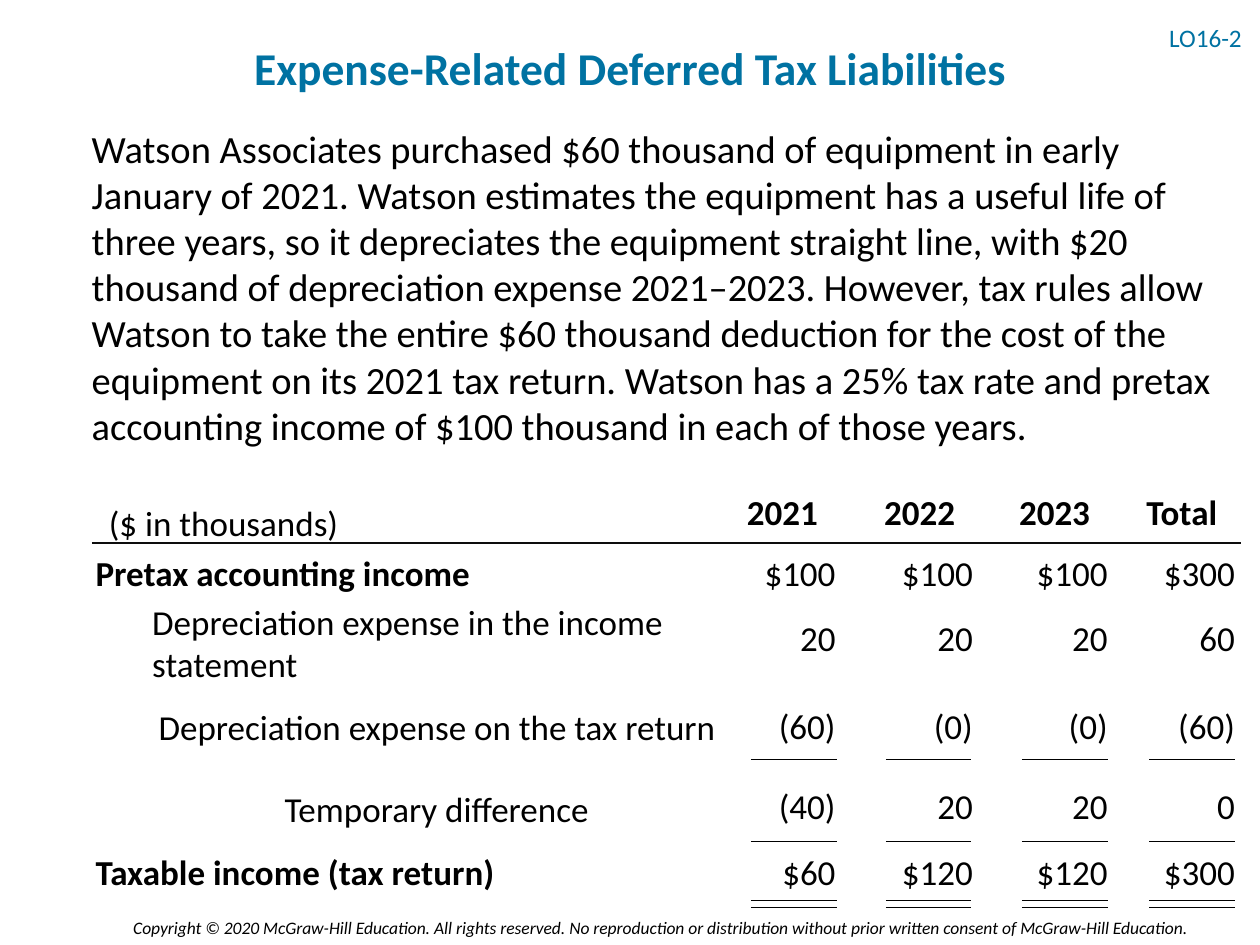
from pptx import Presentation
from pptx.dml.color import RGBColor
from pptx.enum.shapes import MSO_CONNECTOR
from pptx.enum.text import MSO_ANCHOR, PP_ALIGN
from pptx.oxml.ns import qn
from pptx.util import Inches, Pt
from lxml import etree

LEFT, CENTER, RIGHT = PP_ALIGN.LEFT, PP_ALIGN.CENTER, PP_ALIGN.RIGHT
MIDDLE = MSO_ANCHOR.MIDDLE
STRAIGHT = MSO_CONNECTOR.STRAIGHT
BLUE, BLACK = "0072A2", "000000"
ROW_HEIGHT = 0.44

deck = Presentation()
deck.slide_width, deck.slide_height = Inches(10), Inches(7.5)
page = deck.slides.add_slide(deck.slide_layouts[5])


def write(text, left, top, width, height, size=20, color=BLACK, bold=False,
          italic=False, align=LEFT, indent=0, box=None):
    """Fill the given box, or a new text box, with one formatted paragraph."""
    box = box or page.shapes.add_textbox(0, 0, 0, 0)
    box.left, box.top = Inches(left), Inches(top)
    box.width, box.height = Inches(width), Inches(height)
    frame = box.text_frame
    frame.word_wrap = True
    frame.text = text
    para = frame.paragraphs[0]
    para.alignment = align
    if indent:
        properties = para._p.get_or_add_pPr()
        properties.set("marL", str(Inches(indent)))
        properties.set("indent", "0")
    font = para.runs[0].font
    font.name, font.size = "Calibri", Pt(size)
    font.bold, font.italic = bold, italic
    font.color.rgb = RGBColor.from_string(color)
    return frame


def draw_rule(left, right, top, weight=0.5, color=BLACK):
    rule = page.shapes.add_connector(
        STRAIGHT, Inches(left), Inches(top), Inches(right), Inches(top))
    rule.line.width = Pt(weight)
    rule.line.color.rgb = RGBColor.from_string(color)
    etree.SubElement(rule._element.spPr, qn("a:effectLst"))


# Heading, learning objective, case text and copyright line
title = write("Expense-Related Deferred Tax Liabilities", 0.63, 0, 8.75, 1.03,
              26, BLUE, bold=True, align=CENTER, box=page.shapes.title)
title.vertical_anchor = MIDDLE
title.paragraphs[0].line_spacing = 1.1

objective = write("LO16-2", 9.18, 0.13, 0.81, 0.4, 14.4, BLUE)
objective.vertical_anchor = MIDDLE
objective.word_wrap = False
objective.paragraphs[0].line_spacing = 0.7

write("Watson Associates purchased $60 thousand of equipment in early January "
      "of 2021. Watson estimates the equipment has a useful life of three "
      "years, so it depreciates the equipment straight line, with $20 thousand "
      "of depreciation expense 2021–2023. However, tax rules allow Watson to "
      "take the entire $60 thousand deduction for the cost of the equipment on "
      "its 2021 tax return. Watson has a 25% tax rate and pretax accounting "
      "income of $100 thousand in each of those years.",
      0.63, 0.94, 9.2, 2.69, 22)

write("Copyright © 2020 McGraw-Hill Education. All rights reserved. No "
      "reproduction or distribution without prior written consent of "
      "McGraw-Hill Education.",
      0.45, 7.23, 9.07, 0.27, 10, italic=True, align=RIGHT)

# Column headings
column_lefts = [5.69, 6.78, 7.85, 8.86]
write("($ in thousands)", 0.66, 3.93, 2.23, ROW_HEIGHT, align=CENTER)
for heading, left in zip(["2021", "2022", "2023", "Total"], column_lefts):
    write(heading, left, 3.84, 1.04, ROW_HEIGHT, bold=True, align=CENTER)
draw_rule(0.73, 9.85, 4.31, 1.5, "0D0D0D")

# Rows: label, label left, top, width, height, indent, bold, amounts top, amounts
rows = [
    ("Pretax accounting income", 0.66, 4.33, 5.25, ROW_HEIGHT, 0, True,
     4.33, ["$100", "$100", "$100", "$300"]),
    ("Depreciation expense in the income statement", 0.61, 4.72, 5.6, 0.77,
     0.5, False, 4.84, ["20", "20", "20", "60"]),
    ("Depreciation expense on the tax return", 0.66, 5.55, 5.25, ROW_HEIGHT,
     0.5, False, 5.54, ["(60)", "(0)", "(0)", "(60)"]),
    ("Temporary difference", 0.66, 6.2, 5.25, ROW_HEIGHT, 1.5, False,
     6.18, ["(40)", "20", "20", "0"]),
    ("Taxable income (tax return)", 0.66, 6.7, 5.25, ROW_HEIGHT, 0, True,
     6.7, ["$60", "$120", "$120", "$300"]),
]
for label, left, top, width, height, indent, bold, amounts_top, amounts in rows:
    write(label, left, top, width, height, bold=bold, indent=indent)
    for amount, column_left in zip(amounts, column_lefts):
        write(amount, column_left, amounts_top, 1.04, ROW_HEIGHT, align=RIGHT)

# Subtotal rules and the double rule under the last row
for rule_left in [5.96, 7.03, 8.11, 9.12]:
    for rule_top in [6.03, 6.68, 7.15, 7.2]:
        draw_rule(rule_left, rule_left + 0.68, rule_top)

deck.save("out.pptx")
